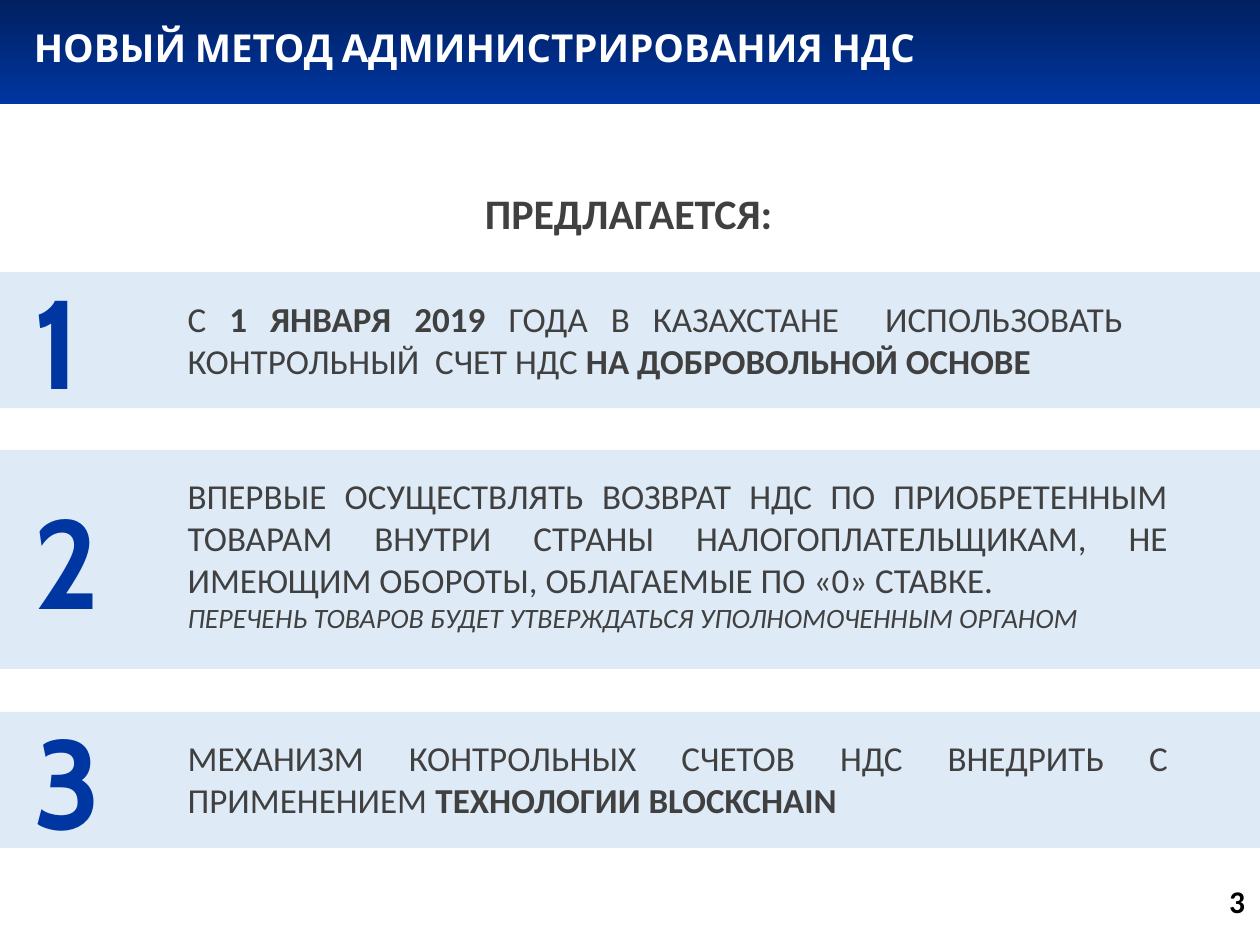
from pptx import Presentation
from pptx.dml.color import RGBColor
from pptx.enum.shapes import MSO_SHAPE as Shape
from pptx.enum.text import PP_ALIGN as Align
from pptx.util import Inches, Pt

NAVY, BLUE, PALE, GRAY = "002060", "0036A2", "DEEBF7", "404040"


def color(hex_string):
    return RGBColor.from_string(hex_string)


def add_text(box, paragraphs, font_name, hex_string, align=Align.LEFT, wrap=True):
    """Each paragraph is (size, bold, italic, runs); a run is (text, bold)."""
    left, top, width, height = box
    shape = slide.shapes.add_textbox(
        Inches(left), Inches(top), Inches(width), Inches(height))
    frame = shape.text_frame
    frame.word_wrap = wrap
    for index, (size, italic, runs) in enumerate(paragraphs):
        paragraph = frame.add_paragraph() if index else frame.paragraphs[0]
        paragraph.alignment = align
        paragraph.font.size = Pt(size)
        for text, bold in runs:
            run = paragraph.add_run()
            run.text = text
            font = run.font
            font.name, font.size = font_name, Pt(size)
            font.bold, font.italic = bold, italic
            font.color.rgb = color(hex_string)


presentation = Presentation()
presentation.slide_width = Inches(10)
presentation.slide_height = Inches(7.5)
slide = presentation.slides.add_slide(presentation.slide_layouts[6])

# Header with the title
header = slide.shapes.add_shape(Shape.RECTANGLE, 0, 0, Inches(10), Inches(0.83))
header.shadow.inherit = False
header.line.fill.background()
header.fill.gradient()
header.fill.gradient_angle = 270
for stop, shade in zip(header.fill.gradient_stops, (NAVY, BLUE)):
    stop.color.rgb = color(shade)
add_text((0.17, 0.14, 9.49, 0.47),
         [(22, False, [("НОВЫЙ МЕТОД АДМИНИСТРИРОВАНИЯ НДС", True)])],
         "Cabin", "FFFFFF")

# Subtitle
add_text((3.75, 1.44, 2.51, 0.5), [(24, False, [("ПРЕДЛАГАЕТСЯ:", True)])],
         "Calibri", GRAY, Align.JUSTIFY, wrap=False)

# Numbered bands: top, height, text box (top, width, height), paragraphs
proposals = [
    (2.16, 1.08, (2.31, 7.62, 0.77), [
        (20, False, [("С ", False), ("1 ЯНВАРЯ 2019 ", True),
                     ("ГОДА В КАЗАХСТАНЕ  ИСПОЛЬЗОВАТЬ КОНТРОЛЬНЫЙ  СЧЕТ НДС ", False),
                     ("НА ДОБРОВОЛЬНОЙ ОСНОВЕ", True)])]),
    (3.57, 1.74, (3.72, 7.98, 1.38), [
        (20, False, [("ВПЕРВЫЕ ОСУЩЕСТВЛЯТЬ ВОЗВРАТ НДС ПО ПРИОБРЕТЕННЫМ ТОВАРАМ "
                      "ВНУТРИ СТРАНЫ НАЛОГОПЛАТЕЛЬЩИКАМ, НЕ ИМЕЮЩИМ ОБОРОТЫ, "
                      "ОБЛАГАЕМЫЕ ПО «0» СТАВКЕ. ", False)]),
        (16, True, [("ПЕРЕЧЕНЬ ТОВАРОВ БУДЕТ УТВЕРЖДАТЬСЯ УПОЛНОМОЧЕННЫМ ОРГАНОМ",
                     False)])]),
    (5.65, 1.08, (5.8, 7.98, 0.77), [
        (20, False, [("МЕХАНИЗМ КОНТРОЛЬНЫХ СЧЕТОВ НДС ВНЕДРИТЬ С ПРИМЕНЕНИЕМ ", False),
                     ("ТЕХНОЛОГИИ BLOCKCHAIN", True)])]),
]
number_height = 1.31
for number, (top, height, (text_top, width, text_height), paragraphs) in enumerate(proposals, 1):
    band = slide.shapes.add_shape(
        Shape.RECTANGLE, 0, Inches(top), Inches(10), Inches(height))
    band.shadow.inherit = False
    band.line.fill.background()
    band.fill.solid()
    band.fill.fore_color.rgb = color(PALE)
    number_top = top + (height - number_height) / 2
    add_text((0.17, number_top, 0.76, number_height),
             [(72, False, [(str(number), True)])], "Cabin", BLUE)
    add_text((1.39, text_top, width, text_height), paragraphs,
             "Calibri", GRAY, Align.JUSTIFY)

# Page number
add_text((7.73, 6.95, 2.25, 0.4), [(18, False, [("3", True)])],
         "Calibri", "000000", Align.RIGHT)

presentation.save("out.pptx")
